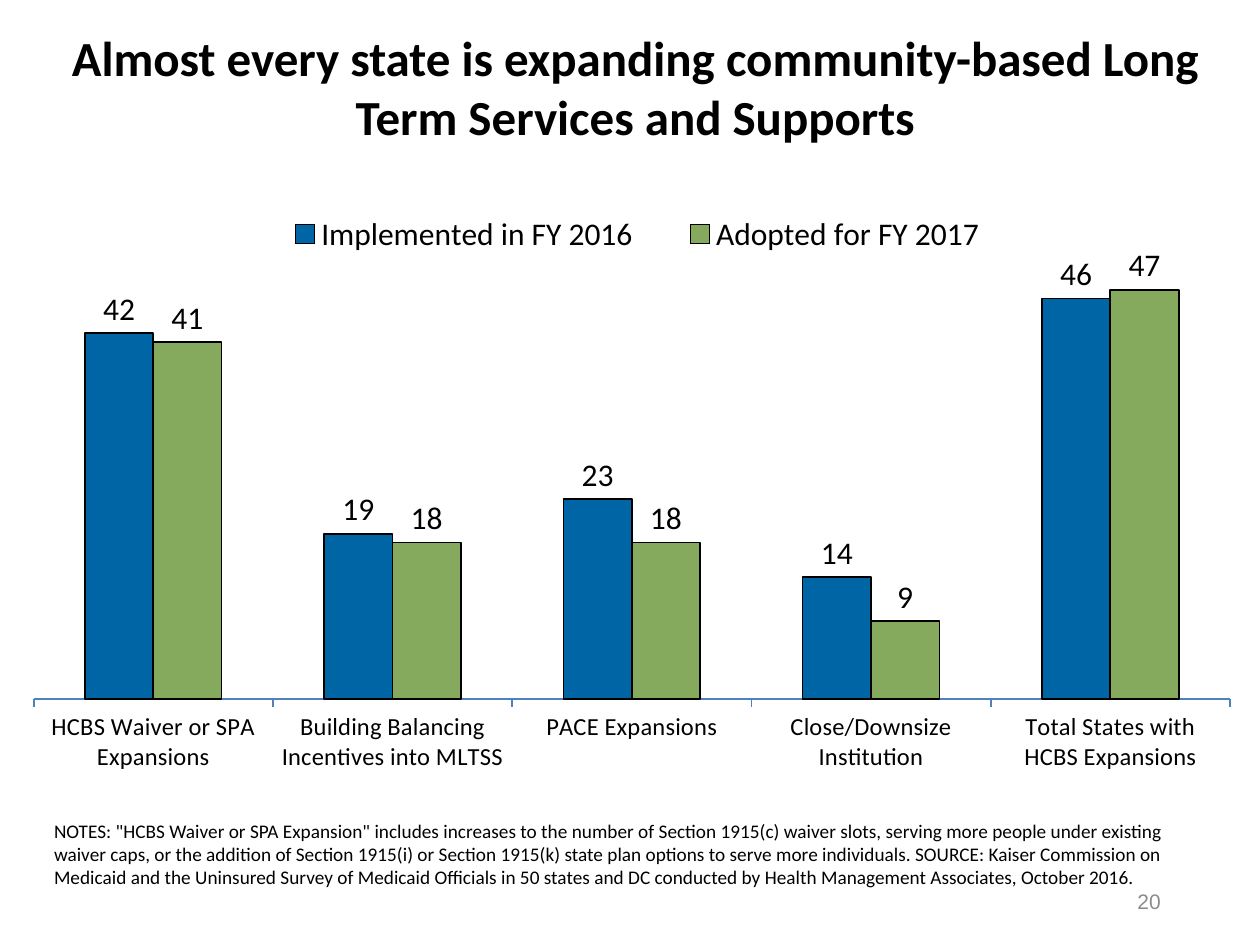
from pptx import Presentation
from pptx.chart.data import CategoryChartData
from pptx.dml.color import RGBColor
from pptx.enum.chart import (XL_CHART_TYPE, XL_LABEL_POSITION,
                             XL_LEGEND_POSITION, XL_TICK_MARK)
from pptx.enum.text import MSO_ANCHOR, PP_ALIGN
from pptx.oxml import parse_xml
from pptx.oxml.ns import nsdecls, qn
from pptx.util import Cm, Pt

COLUMNS = XL_CHART_TYPE.COLUMN_CLUSTERED
OUT_END = XL_LABEL_POSITION.OUTSIDE_END
ON_TOP = XL_LEGEND_POSITION.TOP
TICK_OUT = XL_TICK_MARK.OUTSIDE
TOP, MIDDLE, BOTTOM = MSO_ANCHOR.TOP, MSO_ANCHOR.MIDDLE, MSO_ANCHOR.BOTTOM
LEFT, CENTER, RIGHT = PP_ALIGN.LEFT, PP_ALIGN.CENTER, PP_ALIGN.RIGHT

BLACK = RGBColor(0x00, 0x00, 0x00)
GRAY = RGBColor(0x8C, 0x8C, 0x8C)
BLUE = RGBColor(0x00, 0x65, 0xA5)
GREEN = RGBColor(0x85, 0xAA, 0x5D)
AXIS = RGBColor(0x4F, 0x81, 0xBD)

TITLE = ("Almost every state is expanding community-based Long "
         "Term Services and Supports")
NOTES = (
    'NOTES: "HCBS Waiver or SPA Expansion" includes increases to the number '
    "of Section 1915(c) waiver slots, serving more people under existing "
    "waiver caps, or the addition of Section 1915(i) or Section 1915(k) state "
    "plan options to serve more individuals. SOURCE: Kaiser Commission on "
    "Medicaid and the Uninsured Survey of Medicaid Officials in 50 states and "
    "DC conducted by Health Management Associates, October 2016."
)
GROUPS = [
    "HCBS Waiver or SPA Expansions",
    "Building Balancing Incentives into MLTSS",
    "PACE Expansions",
    "Close/Downsize Institution",
    "Total States with HCBS Expansions",
]
SERIES = [
    ("Implemented in FY 2016", (42, 19, 23, 14, 46), BLUE),
    ("Adopted for FY 2017", (41, 18, 18, 9, 47), GREEN),
]


def set_font(font, size, color=BLACK, name="Calibri", bold=False):
    font.name, font.size, font.bold = name, Pt(size), bold
    font.color.rgb = color


def add_text(slide, box, text, size, align=LEFT, anchor=TOP, **style):
    frame = slide.shapes.add_textbox(*map(Cm, box)).text_frame
    frame.word_wrap = True
    frame.vertical_anchor = anchor
    para = frame.paragraphs[0]
    para.alignment = align
    run = para.add_run()
    run.text = text
    set_font(run.font, size, **style)


def set_layout(parent, index, box, inner=False):
    """Place a chart part at fractions (left, top, width, height)."""
    for old in parent.findall(qn("c:layout")):
        parent.remove(old)
    target = '<c:layoutTarget val="inner"/>' if inner else ""
    modes = "".join(f'<c:{k}Mode val="edge"/>' for k in "xy")
    sizes = "".join(f'<c:{k} val="{v}"/>' for k, v in zip("xywh", box))
    parent.insert(index, parse_xml(
        f'<c:layout {nsdecls("c")}><c:manualLayout>{target}{modes}{sizes}'
        "</c:manualLayout></c:layout>"))


def style_bars(plot):
    plot.gap_width, plot.overlap = 150, 0
    plot.vary_by_categories = False
    for series, (_, _, color) in zip(plot.series, SERIES):
        series.format.fill.solid()
        series.format.fill.fore_color.rgb = color
        series.format.line.color.rgb = BLACK
        series.format.line.width = Pt(1)
        labels = series.data_labels
        labels.show_value = True
        labels.position = OUT_END
        set_font(labels.font, 18)


def style_axes(chart):
    groups, values = chart.category_axis, chart.value_axis
    groups.major_tick_mark = TICK_OUT
    groups.format.line.color.rgb = AXIS
    groups.format.line.width = Pt(1)
    set_font(groups.tick_labels.font, 14)
    values.minimum_scale, values.maximum_scale = 0, 50
    values.has_major_gridlines = False
    values.visible = False


def add_bars(slide, box):
    data = CategoryChartData()
    data.categories = GROUPS
    for name, values, _ in SERIES:
        data.add_series(name, values)
    chart = slide.shapes.add_chart(COLUMNS, *map(Cm, box), data).chart
    set_font(chart.font, 18)
    chart.has_title = False
    chart.has_legend = True
    legend = chart.legend
    legend.position = ON_TOP
    legend.include_in_layout = False
    set_font(legend.font, 18)
    style_bars(chart.plots[0])
    style_axes(chart)
    area = chart.plots[0]._element.getparent()
    set_layout(area, 0, (0.016, 0.12, 0.969, 0.665), inner=True)
    set_layout(legend._element, 1, (0.19, 0.03, 0.63, 0.09))


def main():
    deck = Presentation()
    deck.slide_width, deck.slide_height = Cm(25.4), Cm(19.05)
    slide = deck.slides.add_slide(deck.slide_layouts[6])
    add_bars(slide, (0.28, 3.73, 24.89, 13.21))
    add_text(slide, (0.84, 16.18, 23.11, 1.85), NOTES, 11, anchor=BOTTOM)
    add_text(slide, (0.36, 0.43, 24.89, 2.54), TITLE, 28, CENTER, bold=True)
    add_text(slide, (17.93, 17.65, 5.72, 1.02), "20", 12, RIGHT, MIDDLE,
             color=GRAY, name="Arial")
    deck.save("out.pptx")


if __name__ == "__main__":
    main()
